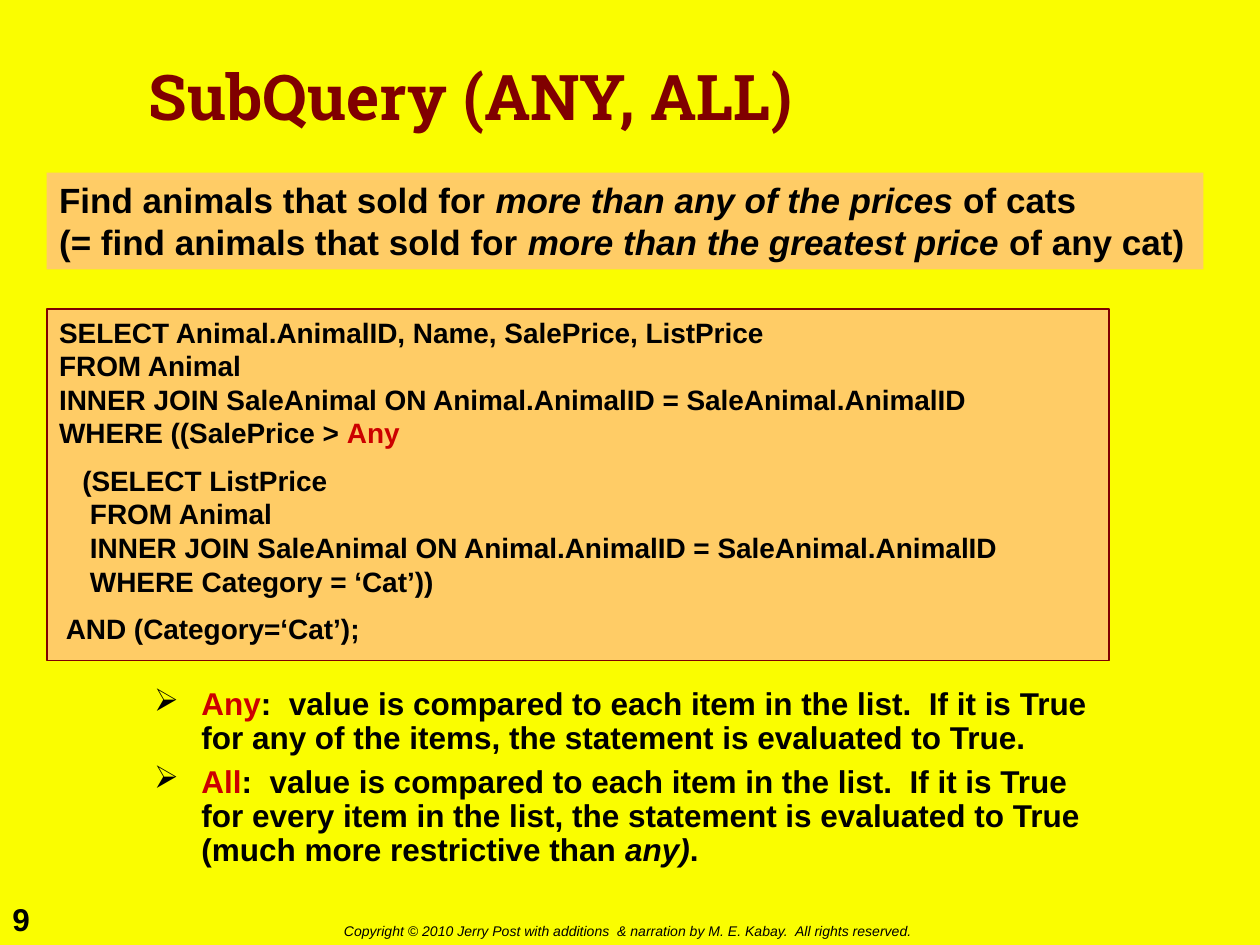
from lxml import etree
from pptx import Presentation
from pptx.dml.color import RGBColor
from pptx.enum.shapes import MSO_SHAPE
from pptx.enum.text import MSO_ANCHOR
from pptx.oxml.ns import qn
from pptx.util import Pt

RECTANGLE = MSO_SHAPE.RECTANGLE
TOP, MIDDLE = MSO_ANCHOR.TOP, MSO_ANCHOR.MIDDLE

COLORS = {
    "background": "FAFD00",
    "panel": "FFCC66",
    "maroon": "800000",
    "keyword": "CC0000",
    "text": "000000",
}
BODY_FONT, TITLE_FONT = "Arial", "Roboto Slab"

# Each paragraph is a list of (text, style) runs.
QUESTION = [
    [("Find animals that sold for ", ""), ("more than any of the prices", "italic"), (" of cats", "")],
    [("(= find animals that sold for ", ""), ("more than the greatest price", "italic"),
     (" of any cat)", "")],
]
QUERY_BLOCKS = [
    [
        [("SELECT Animal.AnimalID, Name, SalePrice, ListPrice", "")],
        [("FROM Animal", "")],
        [("INNER JOIN SaleAnimal ON Animal.AnimalID = SaleAnimal.AnimalID", "")],
        [("WHERE ((SalePrice > ", ""), ("Any", "keyword")],
    ],
    [
        [("   (SELECT ListPrice", "")],
        [("    FROM Animal", "")],
        [("    INNER JOIN SaleAnimal ON Animal.AnimalID = SaleAnimal.AnimalID", "")],
        [("    WHERE Category = ‘Cat’))", "")],
    ],
    [[(" AND (Category=‘Cat’);", "")]],
]
DEFINITIONS = [
    [("Any", "keyword"),
     (":  value is compared to each item in the list.  If it is True for any of the items, "
      "the statement is evaluated to True.", "")],
    [("All", "keyword"),
     (":  value is compared to each item in the list.  If it is True for every item in the list, "
      "the statement is evaluated to True (much more restrictive than ", ""),
     ("any)", "italic"), (".", "")],
]


def color(name):
    return RGBColor.from_string(COLORS[name])


def set_font(paragraph, size, name=BODY_FONT, bold=True, italic=False, color_name="text"):
    font = paragraph.font
    font.name, font.size = name, Pt(size)
    font.bold, font.italic = bold, italic
    font.color.rgb = color(color_name)


def add_runs(paragraph, runs):
    for text, style in runs:
        run = paragraph.add_run()
        run.text = text
        if style == "italic":
            run.font.italic = True
        elif style == "keyword":
            run.font.color.rgb = color("keyword")


def add_bullet(paragraph, symbol, indent):
    properties = paragraph._p.get_or_add_pPr()
    properties.set("marL", str(Pt(indent)))
    properties.set("indent", str(-Pt(indent)))
    bullet_color = etree.SubElement(properties, qn("a:buClr"))
    etree.SubElement(bullet_color, qn("a:srgbClr")).set("val", COLORS["text"])
    etree.SubElement(properties, qn("a:buChar")).set("char", symbol)


def next_paragraph(frame, index):
    return frame.add_paragraph() if index else frame.paragraphs[0]


def add_text_box(slide, box, wrap=True, anchor=TOP):
    frame = slide.shapes.add_textbox(*map(Pt, box)).text_frame
    frame.word_wrap, frame.vertical_anchor = wrap, anchor
    return frame


def add_panel(slide, box, wrap=True, outlined=False):
    shape = slide.shapes.add_shape(RECTANGLE, *map(Pt, box))
    shape.shadow.inherit = False
    shape.fill.solid()
    shape.fill.fore_color.rgb = color("panel")
    if outlined:
        shape.line.color.rgb = color("maroon")
        shape.line.width = Pt(1)
    else:
        shape.line.fill.background()
    frame = shape.text_frame
    frame.word_wrap, frame.vertical_anchor = wrap, TOP
    return frame


def add_line(paragraph, runs, size):
    """Fill a left-aligned paragraph of a panel."""
    paragraph.alignment = 1
    add_runs(paragraph, runs)
    set_font(paragraph, size)


def add_title(slide, box):
    paragraph = add_text_box(slide, box, anchor=MIDDLE).paragraphs[0]
    paragraph.text = "SubQuery (ANY, ALL)"
    paragraph.line_spacing = 0.9
    set_font(paragraph, 36, name=TITLE_FONT, color_name="maroon")


def add_question(slide, box):
    frame = add_panel(slide, box, wrap=False)
    for index, runs in enumerate(QUESTION):
        add_line(next_paragraph(frame, index), runs, 20)


def add_query(slide, box):
    frame = add_panel(slide, box, outlined=True)
    for block_index, block in enumerate(QUERY_BLOCKS):
        for line_index, runs in enumerate(block):
            paragraph = next_paragraph(frame, block_index + line_index)
            if block_index and not line_index:
                paragraph.space_before = Pt(8)
            add_line(paragraph, runs, 16)


def add_definitions(slide, box):
    frame = add_text_box(slide, box)
    for index, runs in enumerate(DEFINITIONS):
        paragraph = next_paragraph(frame, index)
        paragraph.line_spacing = 0.9
        if index:
            paragraph.space_before = Pt(5.4)
        add_bullet(paragraph, "➢", 27)
        add_runs(paragraph, runs)
        set_font(paragraph, 18)


def add_footer(slide, number_box, copyright_box):
    number = add_text_box(slide, number_box, wrap=False).paragraphs[0]
    number.text = "9"
    set_font(number, 18)
    notice = add_text_box(slide, copyright_box, wrap=False).paragraphs[0]
    notice.text = ("Copyright © 2010 Jerry Post with additions  & narration by M. E. Kabay.  "
                   "All rights reserved.")
    set_font(notice, 8, bold=False, italic=True)


def main():
    presentation = Presentation()
    presentation.slide_width, presentation.slide_height = Pt(720), Pt(540)
    slide = presentation.slides.add_slide(presentation.slide_layouts[6])
    slide.background.fill.solid()
    slide.background.fill.fore_color.rgb = color("background")

    add_footer(slide, (0, 511, 36, 29), (189.5, 523.5, 348.5, 17))
    add_title(slide, (78, 12, 564, 90))
    add_definitions(slide, (81, 390, 559, 120))
    add_query(slide, (26.7, 176.5, 607, 201))
    add_question(slide, (26.7, 98.7, 661, 55.3))
    presentation.save("out.pptx")


if __name__ == "__main__":
    main()
